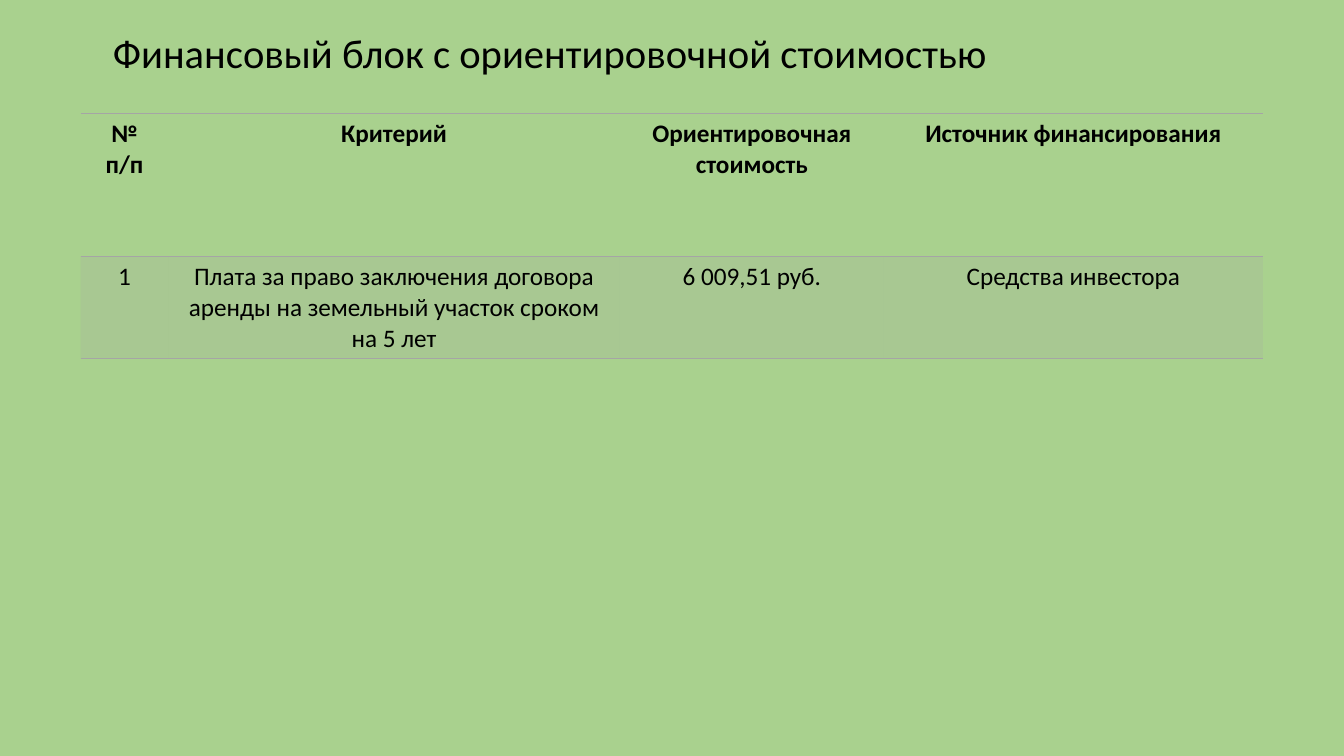
from lxml import etree
from pptx import Presentation
from pptx.dml.color import RGBColor
from pptx.enum import text
from pptx.oxml import ns
from pptx.util import Pt


def color(value):
    return RGBColor.from_string(value)


class SlideBuilder:
    """Holds the style and the current slide, and adds its elements."""

    font, ink, background, gray = "Calibri", "000000", "A9D18E", "A5A5A5"
    plain_table_style = "{2D5ABB26-0587-4C30-8999-92F81FD0307C}"

    def __init__(self, presentation):
        self.slide = presentation.slides.add_slide(presentation.slide_layouts[6])
        fill = self.slide.background.fill
        fill.solid()
        fill.fore_color.rgb = color(self.background)

    def format_text(self, frame, size, bold=False, align=text.PP_ALIGN.LEFT):
        frame.word_wrap = True
        for paragraph in frame.paragraphs:
            paragraph.alignment = align
            for run in paragraph.runs:
                run.font.name = self.font
                run.font.size = Pt(size)
                run.font.bold = bold
                run.font.color.rgb = color(self.ink)

    def title(self, wording, left, top, width, height):
        shape = self.slide.shapes.add_textbox(Pt(left), Pt(top), Pt(width), Pt(height))
        frame = shape.text_frame
        frame.text = wording
        frame.vertical_anchor = text.MSO_ANCHOR.MIDDLE
        frame.paragraphs[0].line_spacing = 0.9
        self.format_text(frame, 29)

    def border(self, cell, sides):
        properties = cell._tc.get_or_add_tcPr()
        for index, side in enumerate(sides):
            line = etree.Element(ns.qn(f"a:ln{side}"), w=str(Pt(1)))
            solid = etree.SubElement(line, ns.qn("a:solidFill"))
            etree.SubElement(solid, ns.qn("a:srgbClr"), val=self.gray)
            properties.insert(index, line)

    def shade(self, cell, percent):
        cell.fill.solid()
        cell.fill.fore_color.rgb = color(self.gray)
        tint = cell._tc.tcPr.find(".//" + ns.qn("a:srgbClr"))
        etree.SubElement(tint, ns.qn("a:alpha"), val=str(percent * 1000))

    def table(self, rows, left, top, widths, heights):
        shape = self.slide.shapes.add_table(
            len(rows), len(widths), Pt(left), Pt(top), Pt(sum(widths)), Pt(sum(heights)))
        table = shape.table
        table.horz_banding = False
        table._tbl.tblPr.find(ns.qn("a:tableStyleId")).text = self.plain_table_style
        for column, width in zip(table.columns, widths):
            column.width = Pt(width)
        for row_index, (wordings, height) in enumerate(zip(rows, heights)):
            header = row_index == 0
            table.rows[row_index].height = Pt(height)
            for column_index, wording in enumerate(wordings):
                cell = table.cell(row_index, column_index)
                cell.text_frame.text = wording
                self.format_text(cell.text_frame, 18, header, text.PP_ALIGN.CENTER)
                if header:
                    cell.fill.background()
                else:
                    self.shade(cell, 20)
                self.border(cell, "TB")


def main():
    presentation = Presentation()
    presentation.slide_width, presentation.slide_height = Pt(960), Pt(540)
    builder = SlideBuilder(presentation)
    builder.title("Финансовый блок с ориентировочной стоимостью", 73.5, 9.5, 828, 60.5)
    builder.table(
        [["№ п/п", "Критерий", "Ориентировочная стоимость", "Источник финансирования"],
         ["1", "Плата за право заключения договора аренды на земельный участок сроком на 5 лет",
          "6 009,51 руб.", "Средства инвестора"]],
        57.6, 81, [62.6, 322.6, 188.6, 270.7], [102.2, 73])
    presentation.save("out.pptx")


if __name__ == "__main__":
    main()
